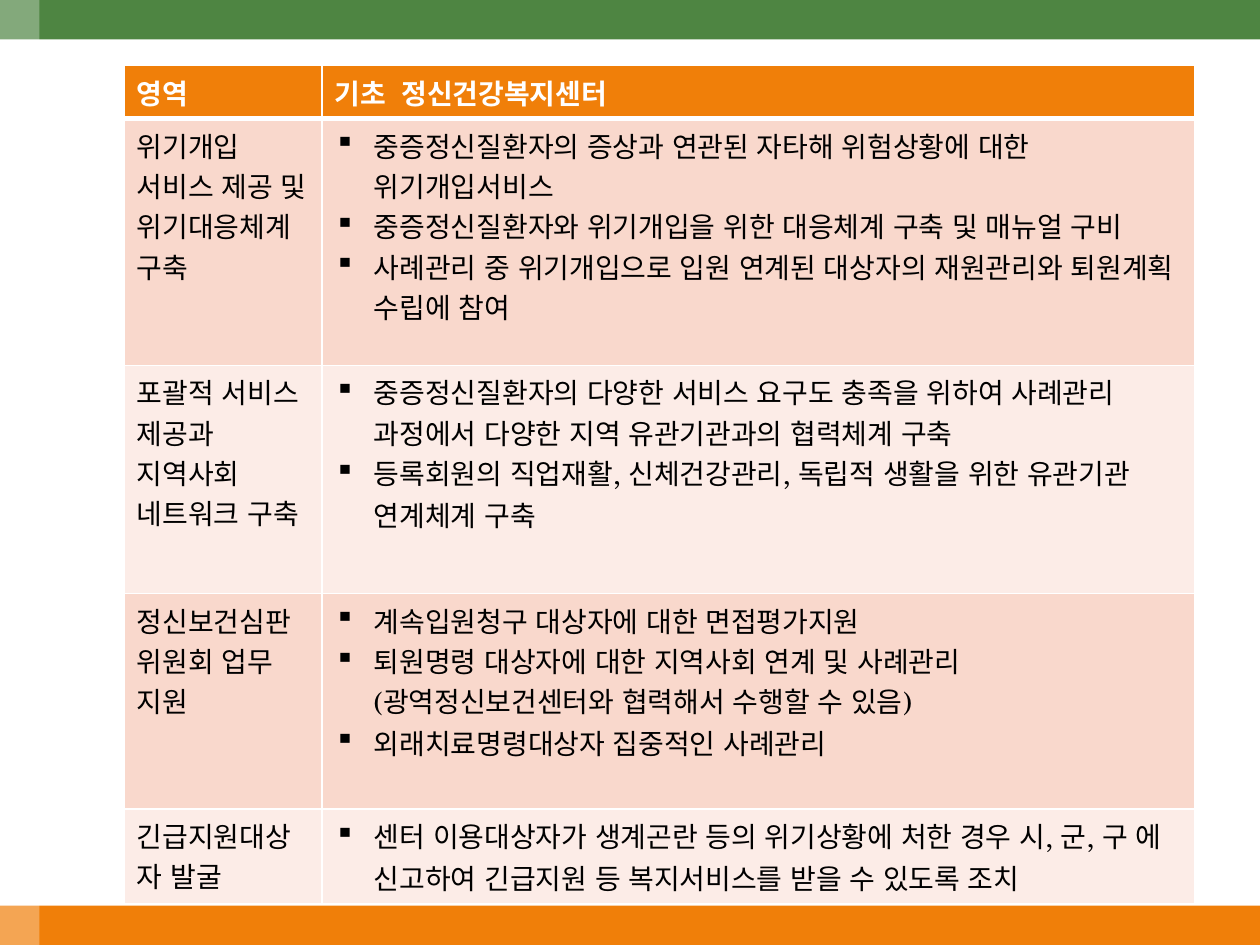
import lxml.etree
import pptx
import pptx.dml.color
import pptx.enum.lang
import pptx.enum.shapes
import pptx.oxml.ns
import pptx.util

Pt = pptx.util.Pt
RGBColor = pptx.dml.color.RGBColor
qn = pptx.oxml.ns.qn

ORANGE = RGBColor(0xF0, 0x7F, 0x09)
GREEN = RGBColor(0x4E, 0x85, 0x42)
WHITE = RGBColor(0xFF, 0xFF, 0xFF)
BLACK = RGBColor(0x00, 0x00, 0x00)
PINK = RGBColor(0xF9, 0xD8, 0xCC)
PALE_PINK = RGBColor(0xFC, 0xEC, 0xE7)

FONT = {
    "name": "TeX Gyre Schola",
    "size": Pt(16),
    "language_id": pptx.enum.lang.MSO_LANGUAGE_ID.KOREAN,
}
HEADER_FONT = {**FONT, "bold": True}
BODY_FONT = {**FONT, "bold": False}

HEADINGS = ["영역", "기초  정신건강복지센터"]
SERVICES = [
    ("위기개입 서비스 제공 및 위기대응체계 구축", [
        "중증정신질환자의 증상과 연관된 자타해 위험상황에 대한 위기개입서비스",
        "중증정신질환자와 위기개입을 위한 대응체계 구축 및 매뉴얼 구비",
        "사례관리 중 위기개입으로 입원 연계된 대상자의 재원관리와 퇴원계획 수립에 참여",
    ]),
    ("포괄적 서비스 제공과 지역사회 네트워크 구축", [
        "중증정신질환자의 다양한 서비스 요구도 충족을 위하여 사례관리 과정에서 "
        "다양한 지역 유관기관과의 협력체계 구축",
        "등록회원의 직업재활, 신체건강관리, 독립적 생활을 위한 유관기관 연계체계 구축",
    ]),
    ("정신보건심판위원회 업무 지원", [
        "계속입원청구 대상자에 대한 면접평가지원",
        "퇴원명령 대상자에 대한 지역사회 연계 및 사례관리"
        "(광역정신보건센터와 협력해서 수행할 수 있음)",
        "외래치료명령대상자 집중적인 사례관리",
    ]),
    ("긴급지원대상자 발굴", [
        "센터 이용대상자가 생계곤란 등의 위기상황에 처한 경우 시, 군, 구 에 신고하여 "
        "긴급지원 등 복지서비스를 받을 수 있도록 조치",
    ]),
]
COLUMN_WIDTHS = [113, 499]
ROW_HEIGHTS = [30, 141, 130.5, 123, 53]


def write_cell(cell, texts, font_format, color, bulleted):
    for index, text in enumerate(texts):
        frame = cell.text_frame
        paragraph = frame.add_paragraph() if index else frame.paragraphs[0]
        run = paragraph.add_run()
        run.text = text
        for name, value in font_format.items():
            setattr(run.font, name, value)
        run.font.color.rgb = color
        if bulleted:
            properties = paragraph._p.get_or_add_pPr()
            properties.set("marL", str(Pt(22.5)))
            properties.set("indent", str(-Pt(22.5)))
            lxml.etree.SubElement(properties, qn("a:buChar"), char="▪")


def style_cell(cell, fill_color, border_widths):
    """Fill the cell and draw white borders; widths map side letters to points."""
    cell.fill.solid()
    cell.fill.fore_color.rgb = fill_color
    properties = cell._tc.get_or_add_tcPr()
    for position, (side, width) in enumerate(border_widths.items()):
        line = lxml.etree.Element(qn(f"a:ln{side}"), w=str(Pt(width)))
        fill = lxml.etree.SubElement(line, qn("a:solidFill"))
        lxml.etree.SubElement(fill, qn("a:srgbClr"), val=str(WHITE))
        properties.insert(position, line)


presentation = pptx.Presentation()
presentation.slide_width = Pt(720)
presentation.slide_height = Pt(540)
slide = presentation.slides.add_slide(presentation.slide_layouts[6])

# Bottom bar, top bar and the translucent strip that lightens their left ends
BANDS = [
    (0, 517.5, 720, 22.5, ORANGE),
    (0, 0, 720, 22.5, GREEN),
    (0, 0, 22.5, 540, WHITE),
]
for left, top, width, height, color in BANDS:
    band = slide.shapes.add_shape(
        pptx.enum.shapes.MSO_SHAPE.RECTANGLE, Pt(left), Pt(top), Pt(width), Pt(height)
    )
    band.shadow.inherit = False
    band.fill.solid()
    band.fill.fore_color.rgb = color
    band.line.fill.background()
strip_color = band.fill._xPr.find(".//" + qn("a:srgbClr"))
lxml.etree.SubElement(strip_color, qn("a:alpha"), val="30000")

table = slide.shapes.add_table(
    len(ROW_HEIGHTS), len(COLUMN_WIDTHS), Pt(71), Pt(37.5),
    Pt(sum(COLUMN_WIDTHS)), Pt(sum(ROW_HEIGHTS)),
).table
for column, width in zip(table.columns, COLUMN_WIDTHS):
    column.width = Pt(width)
for row, height in zip(table.rows, ROW_HEIGHTS):
    row.height = Pt(height)

for column_index, heading in enumerate(HEADINGS):
    cell = table.cell(0, column_index)
    write_cell(cell, [heading], HEADER_FONT, WHITE, False)
    style_cell(cell, ORANGE, {"L": 1, "R": 1, "T": 1, "B": 3})

for row_index, (area, duties) in enumerate(SERVICES, start=1):
    area_cell, duties_cell = table.rows[row_index].cells
    write_cell(area_cell, [area], BODY_FONT, BLACK, False)
    write_cell(duties_cell, duties, BODY_FONT, BLACK, True)
    top_width = 3 if row_index == 1 else 1
    for cell in (area_cell, duties_cell):
        style_cell(cell, PINK if row_index % 2 else PALE_PINK,
                   {"L": 1, "R": 1, "T": top_width, "B": 1})

presentation.save("out.pptx")
